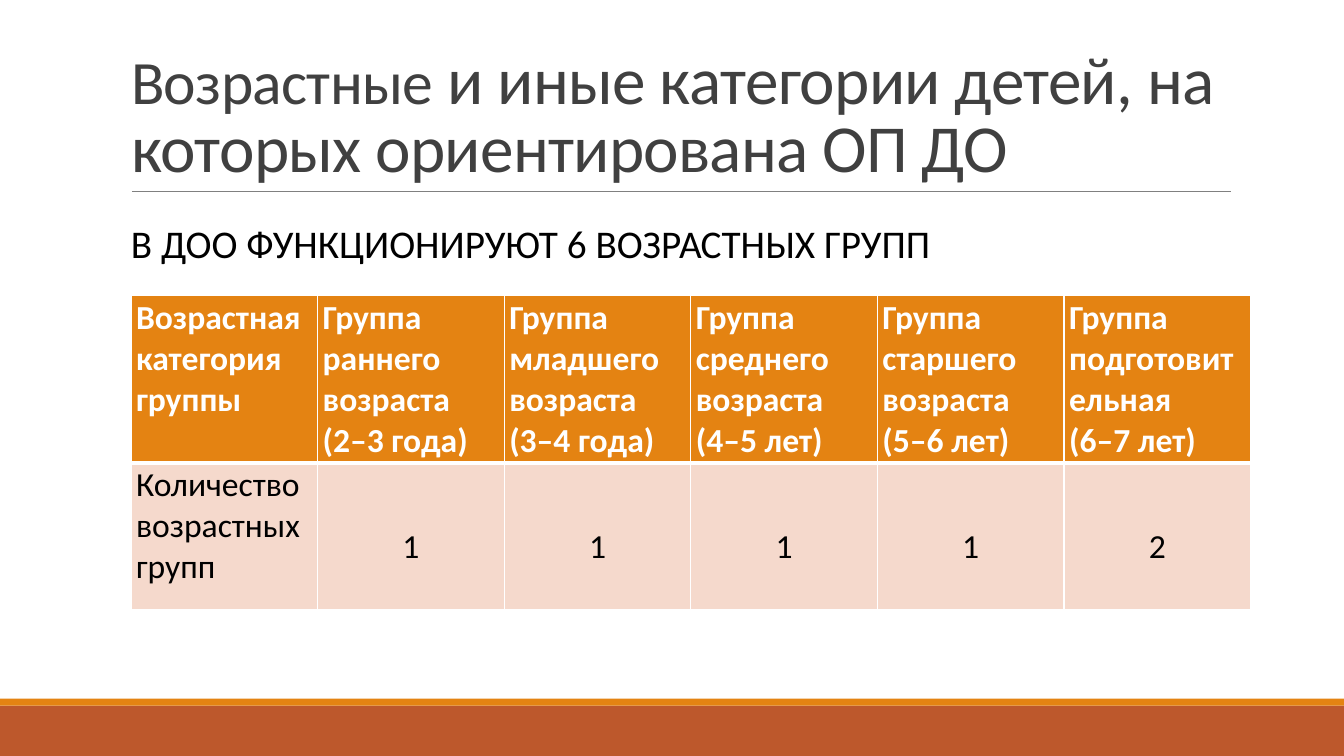
from dataclasses import dataclass

from lxml import etree
from pptx import Presentation
from pptx.dml.color import RGBColor
from pptx.enum.shapes import MSO_CONNECTOR, MSO_SHAPE
from pptx.enum.text import MSO_ANCHOR, MSO_AUTO_SIZE, PP_ALIGN
from pptx.oxml.ns import qn
from pptx.util import Pt

FONT = "Calibri"
WHITE = RGBColor(0xFF, 0xFF, 0xFF)
BLACK = RGBColor(0x00, 0x00, 0x00)
TITLE_GRAY = RGBColor(0x40, 0x40, 0x40)
RULE_GRAY = RGBColor(0x80, 0x80, 0x80)
ORANGE = RGBColor(0xE4, 0x83, 0x12)
RUST = RGBColor(0xBD, 0x58, 0x2C)
PEACH = RGBColor(0xF5, 0xD9, 0xCC)

SLIDE_WIDTH, SLIDE_HEIGHT = 960, 540
COLUMN_WIDTH = 133.3
ROW_HEIGHTS = (119.5, 105.1)


@dataclass(frozen=True)
class Band:
    top: float
    height: float
    color: RGBColor


@dataclass(frozen=True)
class TextStyle:
    size: float
    color: RGBColor
    bold: bool = False


@dataclass(frozen=True)
class AgeGroup:
    heading: tuple[str, ...]
    count: str


BANDS = (Band(504, 36, RUST), Band(499, 5, ORANGE))
HEADER_STYLE = TextStyle(24, WHITE, True)
BODY_STYLE = TextStyle(24, BLACK)
AGE_GROUPS = (
    AgeGroup(("Группа раннего возраста", "(2–3 года)"), "1"),
    AgeGroup(("Группа младшего возраста", "(3–4 года)"), "1"),
    AgeGroup(("Группа среднего возраста (4–5 лет)",), "1"),
    AgeGroup(("Группа старшего возраста (5–6 лет)",), "1"),
    AgeGroup(("Группа подготовительная", "(6–7 лет)"), "2"),
)


def add_run(paragraph, text: str, style: TextStyle) -> None:
    run = paragraph.add_run()
    run.text = text
    font = run.font
    font.name, font.size, font.bold = FONT, Pt(style.size), style.bold
    font.color.rgb = style.color


def add_band(slide, band: Band) -> None:
    shape = slide.shapes.add_shape(
        MSO_SHAPE.RECTANGLE, 0, Pt(band.top), Pt(SLIDE_WIDTH), Pt(band.height))
    shape.shadow.inherit = False
    shape.fill.solid()
    shape.fill.fore_color.rgb = band.color
    shape.line.fill.background()


def add_rule(slide) -> None:
    rule = slide.shapes.add_connector(
        MSO_CONNECTOR.STRAIGHT, Pt(94.3), Pt(136.8), Pt(879.1), Pt(136.8))
    rule.line.color.rgb = RULE_GRAY
    rule.line.width = Pt(0.5)
    etree.SubElement(rule.element.spPr, qn("a:effectLst"))


def format_title(slide) -> None:
    title = slide.shapes.title
    title.left, title.top = Pt(86.4), Pt(22.3)
    title.width, title.height = Pt(792), Pt(114.5)
    frame = title.text_frame
    frame.auto_size = MSO_AUTO_SIZE.NONE
    frame.word_wrap = True
    frame.vertical_anchor = MSO_ANCHOR.BOTTOM
    paragraph = frame.paragraphs[0]
    paragraph.alignment = PP_ALIGN.LEFT
    paragraph.line_spacing = 0.85
    add_run(paragraph, "Возрастные", TextStyle(44, TITLE_GRAY))
    add_run(paragraph, " и иные категории детей, на которых ориентирована ОП ДО",
            TextStyle(48, TITLE_GRAY))
    for properties in title.element.iter(qn("a:rPr")):
        properties.set("spc", "-50")


def add_subtitle(slide) -> None:
    box = slide.shapes.add_textbox(Pt(86.4), Pt(154.8), Pt(658.8), Pt(41.8))
    frame = box.text_frame
    frame.word_wrap = True
    frame.vertical_anchor = MSO_ANCHOR.MIDDLE
    paragraph = frame.paragraphs[0]
    paragraph.line_spacing = 0.9
    paragraph.space_before, paragraph.space_after = Pt(12), Pt(2)
    add_run(paragraph, "В ДОО ФУНКЦИОНИРУЮТ 6 ВОЗРАСТНЫХ ГРУПП", TextStyle(28, BLACK))


def set_borders(cell, top: float, bottom: float) -> None:
    properties = cell._tc.get_or_add_tcPr()
    for side, width in (("L", 1), ("R", 1), ("T", top), ("B", bottom)):
        line = etree.SubElement(properties, qn(f"a:ln{side}"), w=str(Pt(width)))
        fill = etree.SubElement(line, qn("a:solidFill"))
        etree.SubElement(fill, qn("a:srgbClr"), val=str(WHITE))


def fill_cell(cell, lines: tuple[str, ...], style: TextStyle, color: RGBColor) -> None:
    cell.margin_left = cell.margin_right = Pt(3.6)
    cell.margin_top = cell.margin_bottom = Pt(1.5)
    cell.fill.solid()
    cell.fill.fore_color.rgb = color
    frame = cell.text_frame
    for index, text in enumerate(lines):
        paragraph = frame.add_paragraph() if index else frame.paragraphs[0]
        add_run(paragraph, text, style)


def add_group_table(slide) -> None:
    headings = [("Возрастная категория группы",)]
    headings += [group.heading for group in AGE_GROUPS]
    counts = [("Количество возрастных групп",)]
    counts += [(group.count,) for group in AGE_GROUPS]

    table = slide.shapes.add_table(
        2, len(headings), Pt(93.6), Pt(211),
        Pt(COLUMN_WIDTH * len(headings)), Pt(sum(ROW_HEIGHTS))).table
    for row, height in zip(table.rows, ROW_HEIGHTS):
        row.height = Pt(height)
    for index, (heading, count) in enumerate(zip(headings, counts)):
        table.columns[index].width = Pt(COLUMN_WIDTH)
        header_cell, count_cell = table.cell(0, index), table.cell(1, index)
        set_borders(header_cell, top=1, bottom=3)
        set_borders(count_cell, top=3, bottom=1)
        fill_cell(header_cell, heading, HEADER_STYLE, ORANGE)
        fill_cell(count_cell, count, BODY_STYLE, PEACH)
        if index:
            paragraph = count_cell.text_frame.paragraphs[0]
            paragraph.alignment = PP_ALIGN.CENTER
            paragraph.line_spacing = 2.5


def main() -> None:
    presentation = Presentation()
    presentation.slide_width = Pt(SLIDE_WIDTH)
    presentation.slide_height = Pt(SLIDE_HEIGHT)
    title_only = presentation.slide_layouts.get_by_name("Title Only")
    slide = presentation.slides.add_slide(title_only)

    # Footer bands and the rule under the title
    for band in BANDS:
        add_band(slide, band)
    add_rule(slide)

    # Headings
    format_title(slide)
    add_subtitle(slide)

    # Age groups
    add_group_table(slide)
    presentation.save("out.pptx")


if __name__ == "__main__":
    main()
